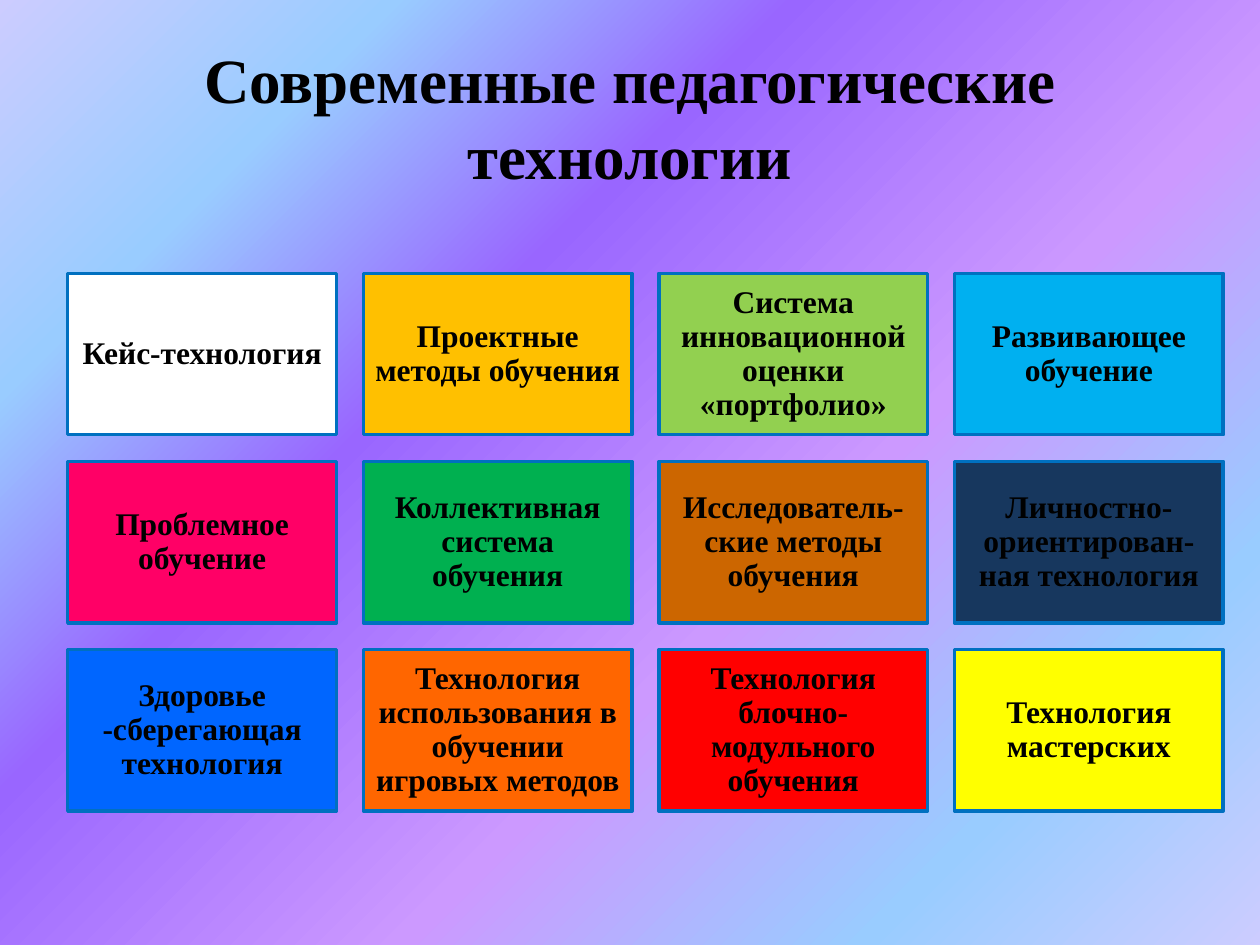
from copy import deepcopy

from pptx import Presentation
from pptx.dml.color import RGBColor
from pptx.enum import shapes, text
from pptx.oxml import ns
from pptx.util import Pt

STOPS = [(0, "CCCCFF"), (0.18, "99CCFF"), (0.36, "9966FF"),
         (0.61, "CC99FF"), (0.82, "99CCFF"), (1, "CCCCFF")]
CARDS = [
    ("Кейс-технология", "FFFFFF"),
    ("Проектные методы обучения", "FFC000"),
    ("Система инновационной оценки «портфолио»", "92D050"),
    ("Развивающее обучение", "00B0F0"),
    ("Проблемное обучение", "FF0066"),
    ("Коллективная система обучения", "00B050"),
    ("Исследователь-ские методы обучения", "CC6600"),
    ("Личностно-ориентирован-ная технология", "17375E"),
    ("Здоровье -сберегающая технология", "0066FF"),
    ("Технология использования в обучении игровых методов", "FF6600"),
    ("Технология блочно-модульного обучения", "FF0000"),
    ("Технология мастерских", "FFFF00"),
]
COLS = 4
LEFT, TOP = 38.7, 156.2
WIDTH, HEIGHT = 153.6, 92.2
GAP = 15.3


def color(code):
    return RGBColor.from_string(code)


class Deck:
    """Hold the text style and the current slide."""

    font = "Times New Roman"
    ink = "000000"
    edge = "0070C0"

    def __init__(self, slide):
        self.slide = slide

    def ground(self, stops):
        fill = self.slide.background.fill
        fill.gradient()
        fill.gradient_angle = 315
        group = self.slide.element.find(".//" + ns.qn("a:gsLst"))
        while len(group) < len(stops):
            group.append(deepcopy(group[0]))
        for stop, (place, code) in zip(fill.gradient_stops, stops):
            stop.position = place
            stop.color.rgb = color(code)

    def label(self, frame, words, size, inset):
        frame.word_wrap = True
        frame.vertical_anchor = text.MSO_ANCHOR.MIDDLE
        frame.margin_left, frame.margin_right = Pt(inset[0]), Pt(inset[0])
        frame.margin_top, frame.margin_bottom = Pt(inset[1]), Pt(inset[1])
        para = frame.paragraphs[0]
        para.alignment = text.PP_ALIGN.CENTER
        run = para.add_run()
        run.text = words
        run.font.name = self.font
        run.font.size = Pt(size)
        run.font.bold = True
        run.font.color.rgb = color(self.ink)
        return para

    def title(self, words, left, top, width, height):
        shape = self.slide.shapes.title
        shape.left, shape.top = Pt(left), Pt(top)
        shape.width, shape.height = Pt(width), Pt(height)
        self.label(shape.text_frame, words, 36, (7.2, 3.6))

    def card(self, words, code, left, top):
        shape = self.slide.shapes.add_shape(
            shapes.MSO_SHAPE.RECTANGLE, Pt(left), Pt(top), Pt(WIDTH), Pt(HEIGHT))
        shape.shadow.inherit = False
        shape.fill.solid()
        shape.fill.fore_color.rgb = color(code)
        shape.line.color.rgb = color(self.edge)
        shape.line.width = Pt(2)
        para = self.label(shape.text_frame, words, 18, (5.4, 5.4))
        para.line_spacing = 0.9
        para.space_after = Pt(6.3)


def main():
    show = Presentation()
    show.slide_width, show.slide_height = Pt(720), Pt(540)
    deck = Deck(show.slides.add_slide(show.slide_layouts[5]))
    deck.ground(STOPS)
    deck.title("Современные педагогические технологии", 36, 21.6, 648, 90)
    for spot, (words, code) in enumerate(CARDS):
        row, col = divmod(spot, COLS)
        deck.card(words, code, LEFT + col * (WIDTH + GAP), TOP + row * (HEIGHT + GAP))
    show.save("out.pptx")


if __name__ == "__main__":
    main()
